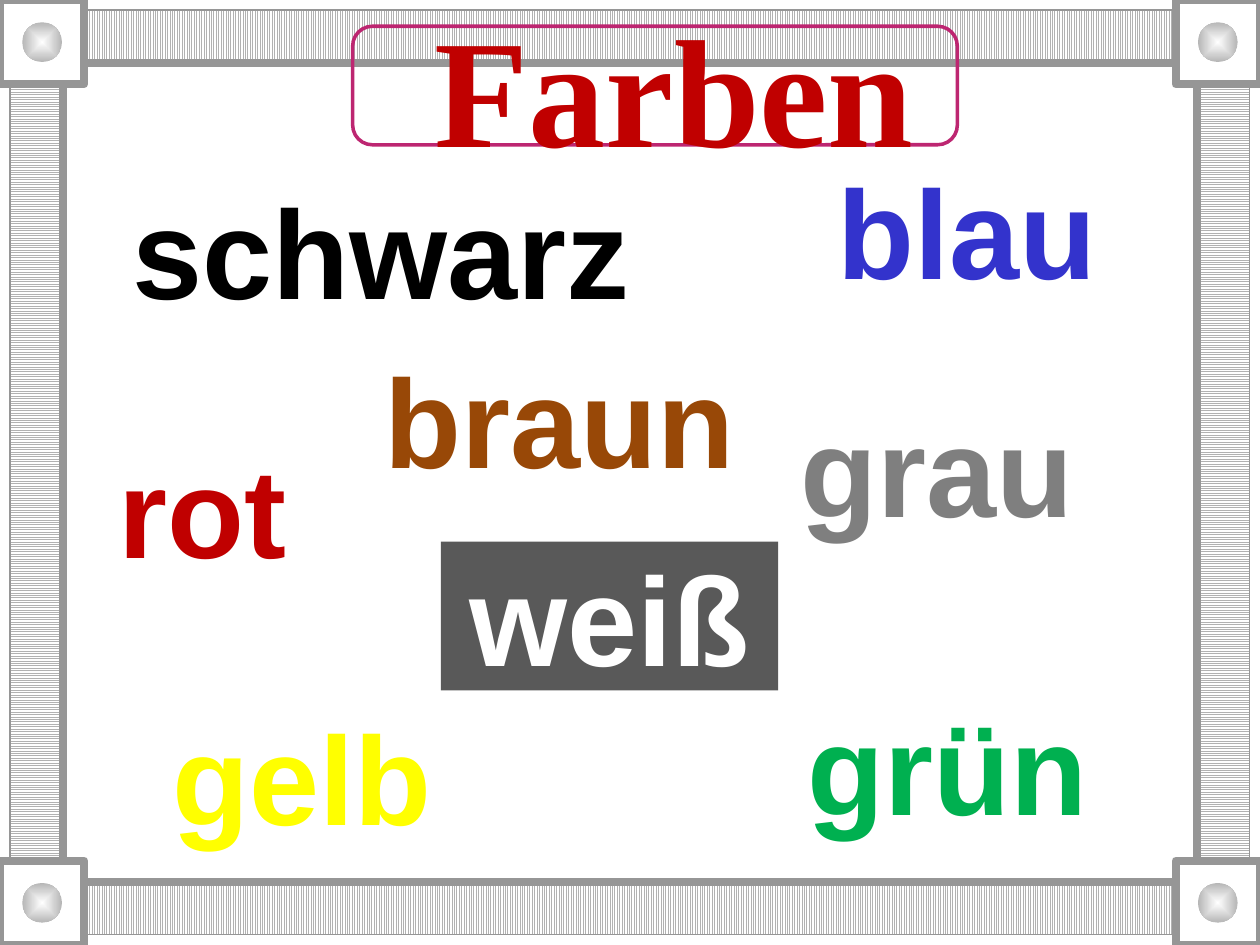
from itertools import product

from pptx import Presentation
from pptx.dml.color import RGBColor
from pptx.enum.dml import MSO_PATTERN as Pattern
from pptx.enum.shapes import MSO_SHAPE as Form
from pptx.enum.text import MSO_ANCHOR as Anchor, PP_ALIGN as Align
from pptx.oxml.ns import qn
from pptx.util import Cm, Pt
from lxml.etree import SubElement

WIDE, HIGH = 25.4, 19.05


def paint(color, code):
    color.rgb = RGBColor.from_string(code)


class Board:
    font, size = "Arial", 72
    gray, light, white = "969696", "B2B2B2", "FFFFFF"

    def __init__(self, slide):
        self.slide = slide

    def shape(self, form, box, fill=None, line=None, width=1):
        item = self.slide.shapes.add_shape(form, *map(Cm, box))
        item.shadow.inherit = False
        if fill:
            item.fill.solid()
            paint(item.fill.fore_color, fill)
        else:
            item.fill.background()
        if line:
            paint(item.line.color, line)
            item.line.width = Pt(width)
        else:
            item.line.fill.background()
        return item

    def band(self, box, pattern):
        fill = self.shape(Form.RECTANGLE, box).fill
        fill.patterned()
        fill.pattern = pattern
        paint(fill.fore_color, self.light)
        paint(fill.back_color, self.white)

    def knob(self, box):
        item = self.shape(Form.OVAL, box)
        item.fill.gradient()
        for stop, (place, code) in zip(item.fill.gradient_stops,
                                       [(0, self.white), (1, "B6B6B6")]):
            stop.position = place
            paint(stop.color, code)
        # Shade from the centre outwards
        grad = item.element.spPr.find(qn("a:gradFill"))
        grad.remove(grad.find(qn("a:lin")))
        shade = SubElement(grad, qn("a:path"), {"path": "shape"})
        SubElement(shade, qn("a:fillToRect"), dict.fromkeys("ltrb", "50000"))

    def label(self, item, text, code, font=None, size=None):
        frame = item.text_frame
        frame.word_wrap = True
        frame.vertical_anchor = Anchor.MIDDLE
        para = frame.paragraphs[0]
        para.text = text
        para.alignment = Align.CENTER
        para.font.name = font or self.font
        para.font.size = Pt(size or self.size)
        para.font.bold = True
        paint(para.font.color, code)

    def word(self, text, code, left, top, width=6.8, fill=None):
        box = left, top, width, 3
        if fill:
            item = self.shape(Form.RECTANGLE, box, fill)
        else:
            item = self.slide.shapes.add_textbox(*map(Cm, box))
        self.label(item, text, code)

    def title(self, text, code, box):
        item = self.shape(Form.ROUNDED_RECTANGLE, box, line="BD2671", width=2)
        self.label(item, text, code, "Times New Roman", 88)
        item.text_frame.margin_left = Cm(1.03)


def main():
    deck = Presentation()
    deck.slide_width, deck.slide_height = Cm(WIDE), Cm(HIGH)
    board = Board(deck.slides.add_slide(deck.slide_layouts[6]))

    # Striped bands and frame lines
    edge, inset = 0.21, 1.27
    thick = inset - edge
    span, rise = WIDE - 2 * inset, HIGH - 2 * inset
    for top in (edge, HIGH - inset):
        board.band((inset, top, span, thick), Pattern.NARROW_VERTICAL)
    for left in (edge, WIDE - inset):
        board.band((left, inset, thick, rise), Pattern.NARROW_HORIZONTAL)
    for gap, width in ((inset, 4.5), (edge, 1)):
        box = gap, gap, WIDE - 2 * gap, HIGH - 2 * gap
        board.shape(Form.RECTANGLE, box, line=board.gray, width=width)

    # Corner blocks with knobs
    side, pad, dot = 1.7, 0.45, 0.8
    for left, top in product((0, WIDE - side), (0, HIGH - side)):
        board.shape(Form.RECTANGLE, (left, top, side, side),
                    board.white, board.gray, 4.5)
        board.knob((left + pad, top + pad, dot, dot))

    # Colour words
    board.word("rot", "C00000", 0.69, 8.74)
    board.word("weiß", "FFFFFF", 8.89, 10.92, fill="595959")
    board.word("grau", "7F7F7F", 15.49, 7.92)
    board.word("braun", "984807", 7.29, 6.93, 8)
    board.word("grün", "00B050", 15.7, 13.92)
    board.word("gelb", "FFFF00", 2.69, 14.12)
    board.word("blau", "3333CC", 16.1, 3.12)
    board.word("schwarz", "000000", 2.29, 3.53, 10.8)

    # Title
    board.title("Farben", "C00000", (7.11, 0.53, 12.19, 2.39))

    deck.save("out.pptx")


if __name__ == "__main__":
    main()
